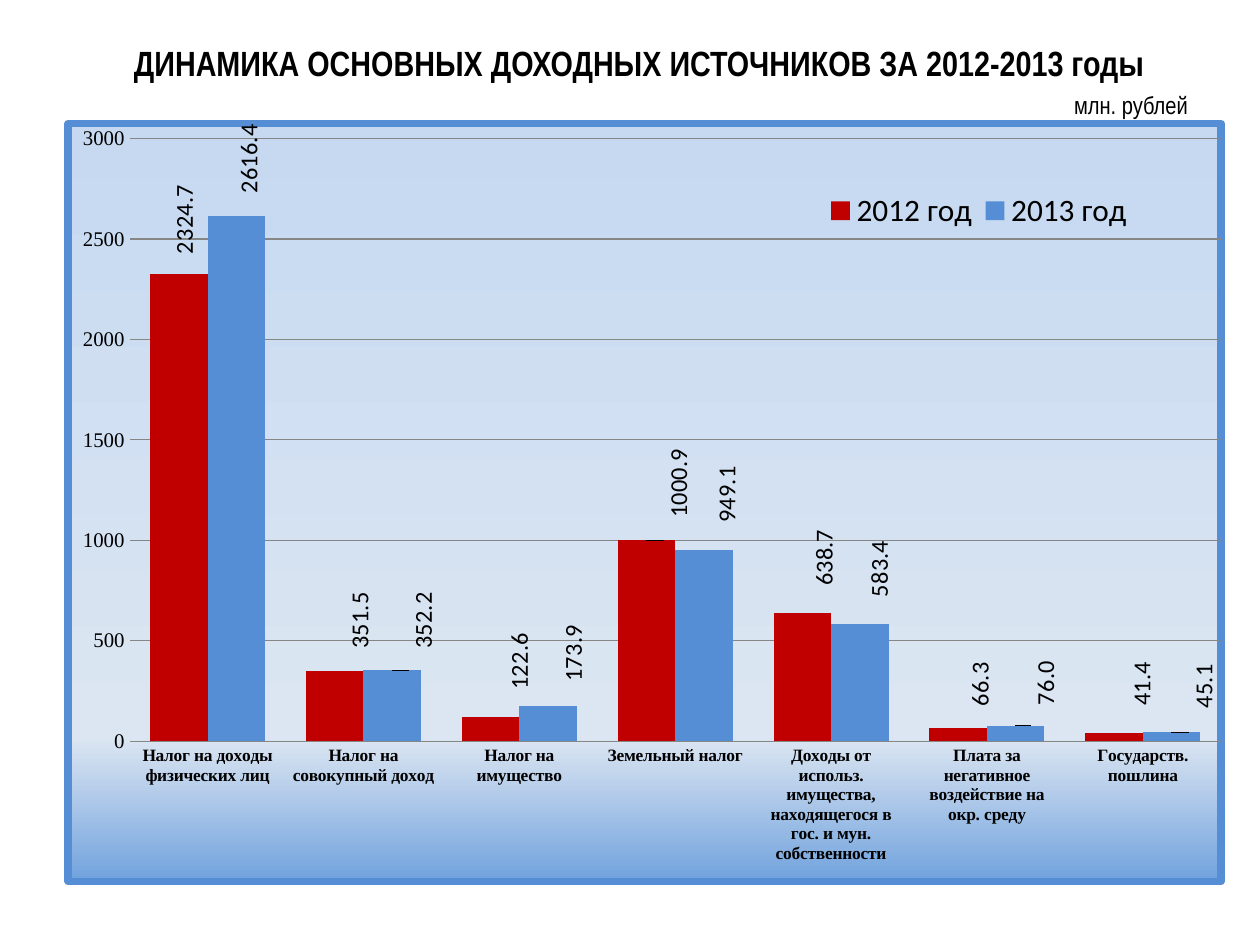
from dataclasses import dataclass

from lxml.etree import SubElement
from pptx import Presentation
from pptx.chart.data import CategoryChartData
from pptx.dml.color import RGBColor
from pptx.enum.chart import (XL_CHART_TYPE, XL_LABEL_POSITION,
                             XL_LEGEND_POSITION, XL_TICK_MARK)
from pptx.enum.text import MSO_ANCHOR, PP_ALIGN
from pptx.oxml import parse_xml
from pptx.oxml.ns import nsdecls, qn
from pptx.util import Cm, Pt


@dataclass(frozen=True)
class Theme:
    ink: str = "000000"
    red: str = "C00000"
    blue: str = "558ED5"
    grid: str = "868686"
    stops: tuple = ((0, "71A2DD"), (19, "DCE6F2"), (100, "C6D9F1"))
    head: str = "Arial Narrow"
    body: str = "Calibri"
    axis: str = "Times New Roman"
    title: int = 20
    legend: int = 18
    label: int = 14
    scale: int = 12
    cat: int = 10
    frame: float = 4.5


T = Theme()

CATS = [
    "Налог на доходы физических лиц",
    "Налог на совокупный доход",
    "Налог на имущество",
    "Земельный налог",
    "Доходы от использ. имущества, находящегося в гос. и мун. собственности",
    "Плата за негативное воздействие на окр. среду",
    "Государств. пошлина",
]
# Name, colour, values, label shifts (right, down) in percent of the chart
SERIES = [
    ("2012 год", T.red, (2324.7, 351.5, 122.6, 1000.9, 638.7, 66.3, 41.4),
     ((0.5, -2), (2.2, -2.2), (2.5, -2.9), (2.8, -2.3),
      (1.9, -2.9), (1.9, -2.2), (2.4, -2.9))),
    ("2013 год", T.blue, (2616.4, 352.2, 173.9, 949.1, 583.4, 76.0, 45.1),
     ((1.1, -2.3), (2.7, -2.2), (2.2, -2.6), (2, -3),
      (1.7, -2.9), (2.6, -2.1), (2.8, -2.5))),
]


def style(font, size, face=T.body, bold=False):
    font.size, font.name, font.bold = Pt(size), face, bold
    font.color.rgb = RGBColor.from_string(T.ink)


def write(frame, text, size, bold=False, space=None):
    frame.word_wrap = True
    frame.vertical_anchor = MSO_ANCHOR.MIDDLE
    para = frame.paragraphs[0]
    para.alignment = PP_ALIGN.CENTER
    para.line_spacing = space
    run = para.add_run()
    run.text = text
    style(run.font, size, T.head, bold)


def layout(**parts):
    """Manual layout with the given settings, in schema order."""
    node = parse_xml(f"<c:layout {nsdecls('c')}><c:manualLayout/></c:layout>")
    for name, value in parts.items():
        SubElement(node[0], qn(f"c:{name}")).set("val", str(value))
    return node


def replace(parent, node, after):
    """Put a node after a named child, in place of any node of its kind."""
    for old in parent.findall(node.tag):
        parent.remove(old)
    parent.find(qn(after)).addnext(node)


def backdrop(chart):
    stops = "".join(f'<a:gs pos="{pos * 1000}"><a:srgbClr val="{color}"/></a:gs>'
                    for pos, color in T.stops)
    node = parse_xml(
        f"<c:spPr {nsdecls('c', 'a')}><a:gradFill><a:gsLst>{stops}</a:gsLst>"
        f'<a:lin ang="16200000" scaled="0"/></a:gradFill>'
        f'<a:ln w="{Pt(T.frame)}"><a:solidFill><a:srgbClr val="{T.blue}"/>'
        f"</a:solidFill><a:round/></a:ln></c:spPr>")
    replace(chart.element, node, "c:chart")


def axes(chart):
    grid = RGBColor.from_string(T.grid)
    cat, val = chart.category_axis, chart.value_axis
    for axis in (cat, val):
        axis.major_tick_mark = axis.minor_tick_mark = XL_TICK_MARK.NONE
    style(cat.tick_labels.font, T.cat, T.axis, True)
    cat.format.line.color.rgb = grid
    style(val.tick_labels.font, T.scale, T.axis)
    val.minimum_scale, val.maximum_scale, val.major_unit = 0, 3000, 500
    val.tick_labels.number_format = "General"
    val.tick_labels.number_format_is_linked = False
    val.format.line.fill.background()
    val.has_major_gridlines = True
    val.major_gridlines.format.line.color.rgb = grid


def labels(series, node, shifts):
    """Upright value labels, each moved from its place above the bar."""
    base = series.data_labels
    base.show_value = True
    base.number_format, base.number_format_is_linked = "0.0", False
    base.position = XL_LABEL_POSITION.OUTSIDE_END
    style(base.font, T.label)
    for i in range(len(shifts)):
        label = series.points[i].data_label
        style(label.font, T.label)
        label.position = XL_LABEL_POSITION.OUTSIDE_END
    for item, (right, down) in zip(node.iter(qn("c:dLbl")), shifts):
        replace(item, layout(x=right / 100, y=down / 100), "c:idx")
        form = parse_xml(f'<c:numFmt {nsdecls("c")} formatCode="0.0" '
                         'sourceLinked="0"/>')
        replace(item, form, "c:layout")
    for body in node.iter(qn("a:bodyPr")):
        body.set("rot", "-5400000")
        body.set("vert", "horz")


def graph(slide, box):
    data = CategoryChartData()
    data.categories = CATS
    for name, _, values, _ in SERIES:
        data.add_series(name, values)
    chart = slide.shapes.add_chart(
        XL_CHART_TYPE.COLUMN_CLUSTERED, *map(Cm, box), data).chart
    style(chart.font, T.legend)
    chart.has_title = False
    backdrop(chart)
    axes(chart)

    # Bars and their labels
    plot = chart.plots[0]
    plot.gap_width, plot.overlap = 71, 0
    plot.vary_by_categories = False
    nodes = list(chart.element.iter(qn("c:ser")))
    for series, node, (_, color, _, shifts) in zip(plot.series, nodes, SERIES):
        series.format.fill.solid()
        series.format.fill.fore_color.rgb = RGBColor.from_string(color)
        series.invert_if_negative = False
        labels(series, node, shifts)

    # Plot area and legend places
    area = next(chart.element.iter(qn("c:plotArea")))
    for old in area.findall(qn("c:layout")):
        area.remove(old)
    area.insert(0, layout(layoutTarget="inner", xMode="edge", yMode="edge",
                          x=0.054, y=0.02, w=0.947, h=0.795))
    chart.has_legend = True
    chart.legend.position = XL_LEGEND_POSITION.BOTTOM
    chart.legend.include_in_layout = False
    style(chart.legend.font, T.legend)
    replace(next(chart.element.iter(qn("c:legend"))),
            layout(xMode="edge", yMode="edge", x=0.65, y=0.08, w=0.28, h=0.07),
            "c:legendPos")


def heading(slide, box):
    title = slide.shapes.title
    title.left, title.top, title.width, title.height = map(Cm, box)
    write(title.text_frame,
          "ДИНАМИКА ОСНОВНЫХ ДОХОДНЫХ ИСТОЧНИКОВ ЗА 2012-2013 годы",
          T.title, bold=True, space=1.2)


def unit(slide, box):
    note = slide.shapes.add_textbox(*map(Cm, box))
    write(note.text_frame, "млн. рублей", T.label)


def main():
    deck = Presentation()
    deck.slide_width, deck.slide_height = Cm(25.4), Cm(19.05)
    slide = deck.slides.add_slide(deck.slide_layouts[5])
    heading(slide, (1.09, 0.33, 23.6, 1.7))
    graph(slide, (1.3, 2.41, 23.39, 15.44))
    unit(slide, (20.88, 1.73, 3.84, 0.76))
    deck.save("out.pptx")


if __name__ == "__main__":
    main()
